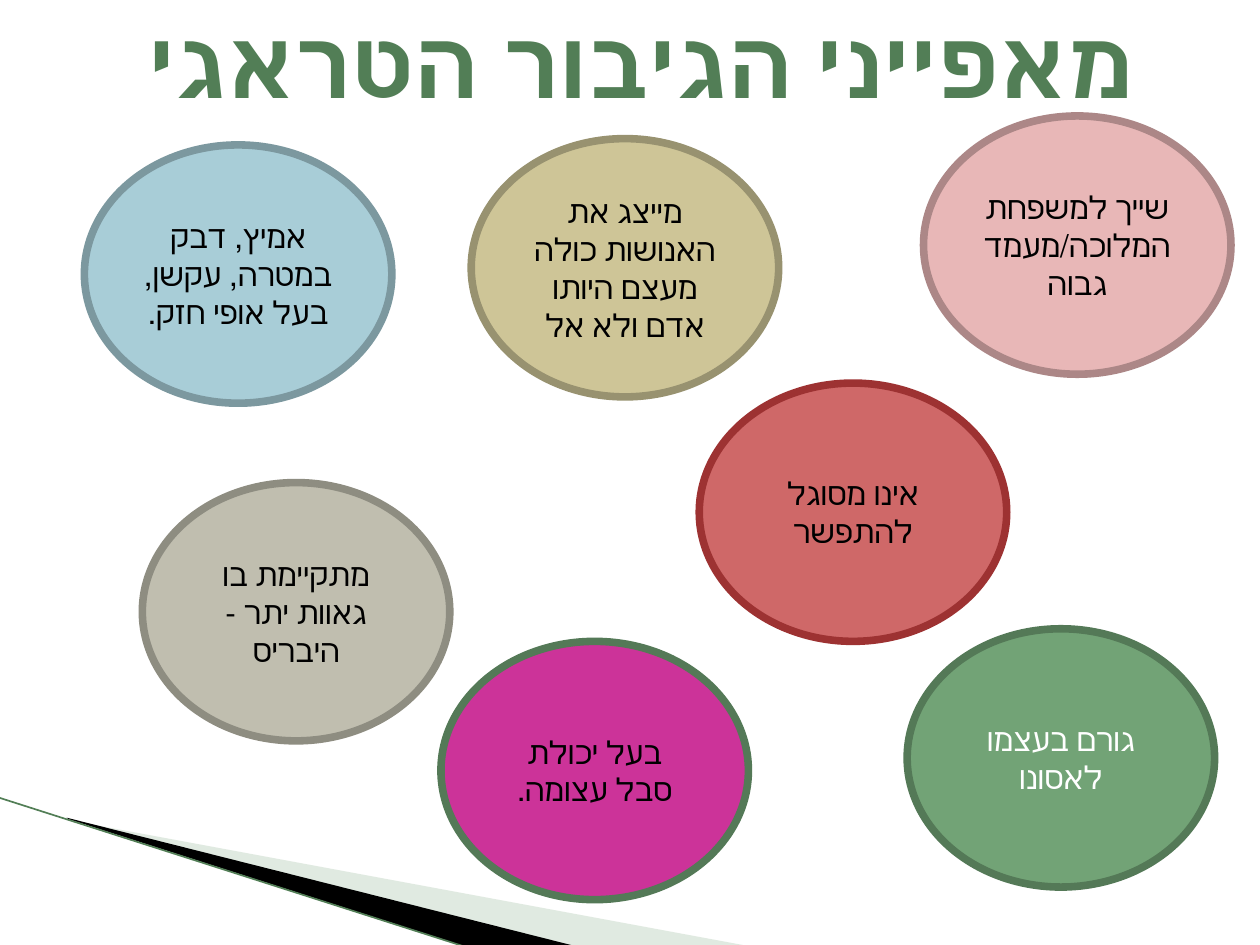
from lxml import etree
from pptx import Presentation
from pptx import util as u
from pptx.dml.color import RGBColor
from pptx.enum import shapes, text
from pptx.oxml.ns import qn

GREEN = RGBColor(0x52, 0x7E, 0x56)
PALE_GREEN = RGBColor(0xB3, 0xCB, 0xB5)
BLACK = RGBColor(0, 0, 0)
WHITE = RGBColor(0xFF, 0xFF, 0xFF)
PINK, PINK_EDGE = RGBColor(0xE8, 0xB7, 0xB7), RGBColor(0xAC, 0x87, 0x87)
SAND, SAND_EDGE = RGBColor(0xCE, 0xC5, 0x97), RGBColor(0x98, 0x92, 0x70)
BLUE, BLUE_EDGE = RGBColor(0xA8, 0xCD, 0xD7), RGBColor(0x7C, 0x98, 0x9F)
GRAY, GRAY_EDGE = RGBColor(0xC0, 0xBE, 0xAF), RGBColor(0x8E, 0x8D, 0x81)
MAGENTA = RGBColor(0xCC, 0x33, 0x99)
LEAF, LEAF_EDGE = RGBColor(0x72, 0xA3, 0x76), RGBColor(0x54, 0x79, 0x57)
RED, RED_EDGE = RGBColor(0xCF, 0x68, 0x68), RGBColor(0x9D, 0x32, 0x32)

TITLE_FONT = "Roboto"
BUBBLE_FONT = "Noto Sans Mono"
BUBBLE_SIZE = (2.44, 2.05)
BUBBLES = [
    (7.33, 0.92, "שייך למשפחת המלוכה/מעמד גבוה", PINK, PINK_EDGE, BLACK),
    (3.74, 1.1, "מייצג את האנושות כולה מעצם היותו אדם ולא אל", SAND, SAND_EDGE, BLACK),
    (0.67, 1.15, "אמיץ, דבק במטרה, עקשן, בעל אופי חזק.", BLUE, BLUE_EDGE, BLACK),
    (1.13, 3.83, "מתקיימת בו גאוות יתר - היבריס", GRAY, GRAY_EDGE, BLACK),
    (3.5, 5.09, "בעל יכולת סבל עצומה.", MAGENTA, LEAF_EDGE, BLACK),
    (7.2, 4.99, "גורם בעצמו לאסונו", LEAF, LEAF_EDGE, WHITE),
    (5.55, 3.04, "אינו מסוגל להתפשר", RED, RED_EDGE, BLACK),
]


def write_hebrew(shape, words, font_name, size, color):
    """Write one centred right-to-left paragraph and return it."""
    frame = shape.text_frame
    frame.word_wrap = True
    frame.vertical_anchor = text.MSO_ANCHOR.MIDDLE
    frame.text = words
    paragraph = frame.paragraphs[0]
    paragraph.alignment = text.PP_ALIGN.CENTER
    paragraph._p.get_or_add_pPr().set("rtl", "1")
    font = paragraph.font
    font.name, font.size = font_name, u.Pt(size)
    font.color.rgb = color
    return paragraph


def add_title(slide, left, top, width, height):
    """Place and format the slide title."""
    title = slide.shapes.title
    title.left, title.top = u.Inches(left), u.Inches(top)
    title.width, title.height = u.Inches(width), u.Inches(height)
    paragraph = write_hebrew(title, "מאפייני הגיבור הטראגי", TITLE_FONT, 54, GREEN)
    paragraph.font.bold = True
    defaults = paragraph._p.pPr.find(qn("a:defRPr"))
    etree.SubElement(defaults, qn("a:cs")).set("typeface", TITLE_FONT)
    title.text_frame.auto_size = text.MSO_AUTO_SIZE.NONE


def add_bubble(slide, left, top, width, height, words, fill, edge, ink):
    """Add one outlined ellipse holding a trait of the hero."""
    bubble = slide.shapes.add_shape(
        shapes.MSO_SHAPE.OVAL, *map(u.Inches, (left, top, width, height)))
    bubble.shadow.inherit = False
    bubble.fill.solid()
    bubble.fill.fore_color.rgb = fill
    bubble.line.color.rgb = edge
    bubble.line.width = u.Pt(4.33)
    write_hebrew(bubble, words, BUBBLE_FONT, 18, ink)


def add_wedge(slide, left, top, points, color, opacity=100):
    """Add a filled wedge whose points are relative to its top-left corner."""
    corners = [(u.Inches(left + x), u.Inches(top + y)) for x, y in points]
    builder = slide.shapes.build_freeform(*corners[0])
    builder.add_line_segments(corners[1:], close=True)
    wedge = builder.convert_to_shape()
    wedge.shadow.inherit = False
    wedge.fill.solid()
    wedge.fill.fore_color.rgb = color
    wedge.line.fill.background()
    if opacity < 100:
        color_element = wedge._element.spPr.find(qn("a:solidFill"))[0]
        alpha = etree.SubElement(color_element, qn("a:alpha"))
        alpha.set("val", str(opacity * 1000))


def add_corner_rays(slide, left, top):
    """Draw the two wedges and the thin line in the bottom-left corner."""
    add_wedge(slide, left + 0.56, top + 0.17,
              [(0, 0.01), (5.4, 1.01), (4.01, 1.01), (0, 0)], PALE_GREEN, 40)
    add_wedge(slide, left + 0.54, top + 0.16,
              [(0, 0), (4.04, 1.02), (3.19, 1.03), (0.01, 0.01)], BLACK)
    ray = slide.shapes.add_connector(
        shapes.MSO_CONNECTOR.STRAIGHT, u.Inches(left), u.Inches(top),
        u.Inches(left + 3.72), u.Inches(top + 1.19))
    ray.line.color.rgb = GREEN
    ray.line.width = u.Pt(0.95)
    etree.SubElement(ray._element.spPr, qn("a:effectLst"))


def main():
    """Build and save the slide about the tragic hero."""
    presentation = Presentation()
    presentation.slide_width = u.Inches(10)
    presentation.slide_height = u.Inches(7.5)
    slide = presentation.slides.add_slide(presentation.slide_layouts[5])
    add_corner_rays(slide, -0.01, 6.33)
    add_title(slide, 0.59, -0.02, 9, 1.01)
    for left, top, *style in BUBBLES:
        add_bubble(slide, left, top, *BUBBLE_SIZE, *style)
    presentation.save("out.pptx")


if __name__ == "__main__":
    main()
